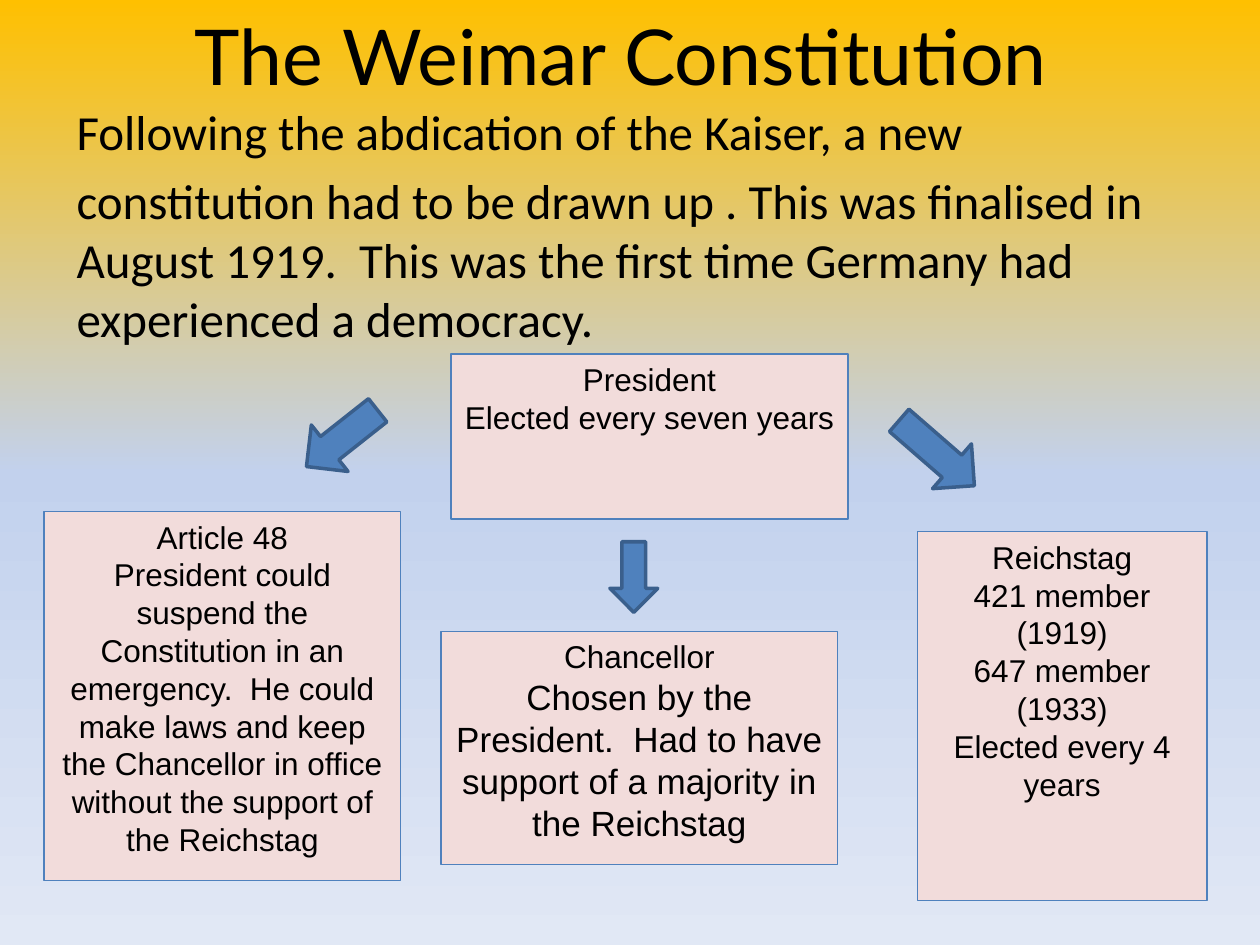
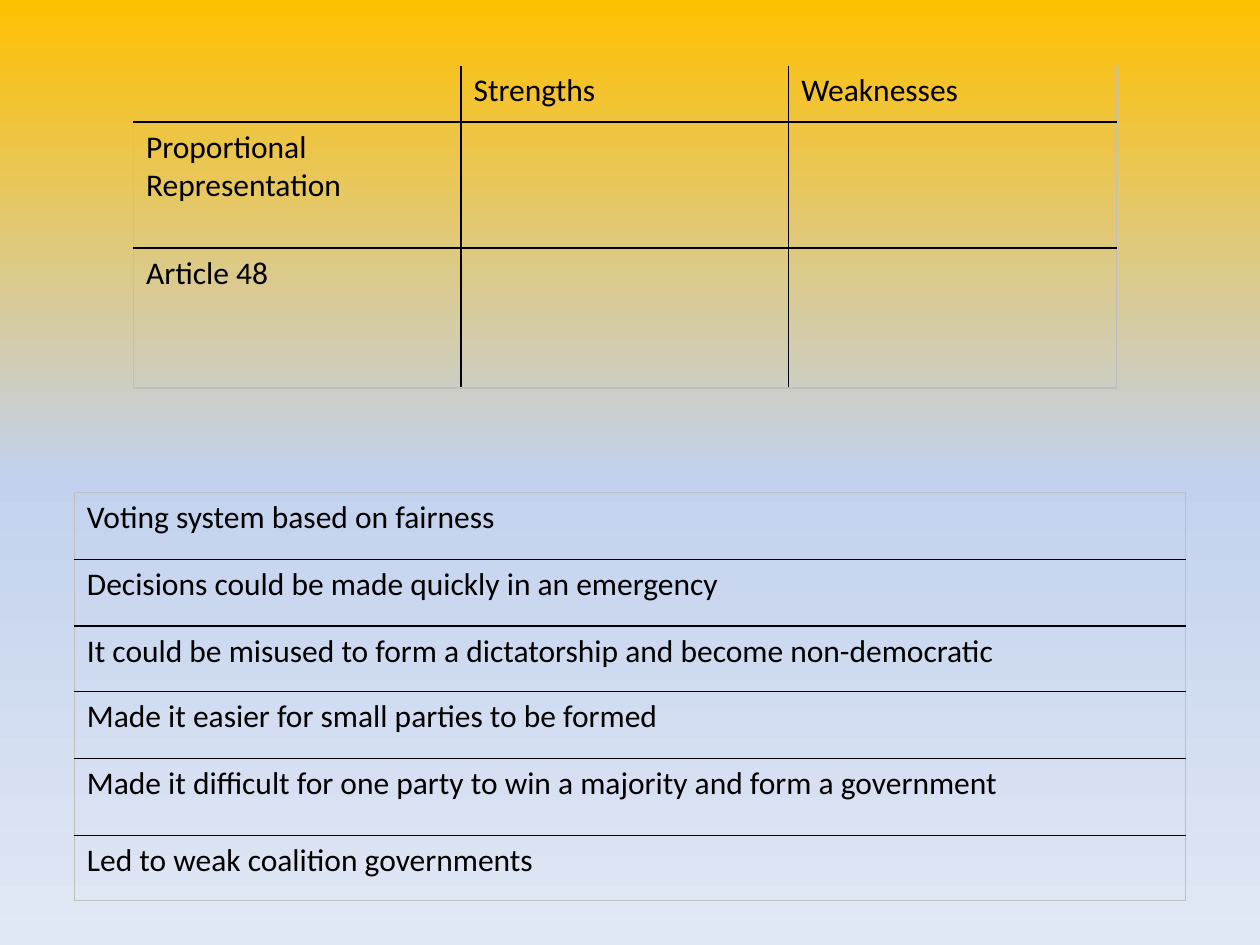
from copy import deepcopy

from lxml import etree
from pptx import Presentation
from pptx.dml.color import RGBColor
from pptx.enum import shapes, text
from pptx.oxml.ns import qn
from pptx.util import Inches, Pt

BLACK = RGBColor(0x00, 0x00, 0x00)
PINK = RGBColor(0xF2, 0xDC, 0xDB)
BLUE = RGBColor(0x4F, 0x81, 0xBD)
DARK_BLUE = RGBColor(0x3A, 0x5F, 0x8C)
GREY = RGBColor(0xBF, 0xBF, 0xBF)
BACKGROUND = [
    (0, RGBColor(0xFF, 0xC0, 0x00)),
    (0.5, RGBColor(0xC2, 0xD1, 0xED)),
    (1, RGBColor(0xE1, 0xE8, 0xF5)),
]
TITLE_ONLY, BLANK = 5, 6

BOXES = [
    ((0.35, 4.06, 2.83, 2.93), 18, [
        "Article 48",
        "President could suspend the Constitution in an emergency.  He could make laws "
        "and keep the Chancellor in office without the support of the Reichstag"]),
    ((3.5, 5.01, 3.15, 1.85), 20, [
        "Chancellor",
        "Chosen by the President.  Had to have support of a majority in the Reichstag"]),
    ((7.28, 4.22, 2.3, 2.93), 18, [
        "Reichstag", "421 member (1919)", "647 member (1933)", "Elected every 4 years"]),
    ((3.58, 2.81, 3.15, 1.31), 18, ["President", "Elected every seven years "]),
]
ARROWS = [
    ((4.84, 4.3, 0.38, 0.56), 0),
    ((2.48, 3.12, 0.47, 0.72), 51.7),
    ((7.2, 3.2, 0.47, 0.79), 311),
]
COMPARISON = [
    ["", "Strengths", "Weaknesses"],
    ["Proportional Representation", "", ""],
    ["Article 48", "", ""],
]
STATEMENTS = [
    "Voting system based on fairness",
    "Decisions could be made quickly in an emergency",
    "It could be misused to form a dictatorship and become non-democratic",
    "Made it easier for small parties to be formed",
    "Made it difficult for one party to win a majority and form a government",
    "Led to weak coalition governments",
]


def add_border(cell, side, color):
    """Draw one side (L, R, T or B) of a cell, or hide it when color is None."""
    line = etree.SubElement(cell._tc.get_or_add_tcPr(), qn(f"a:ln{side}"), w=str(Pt(1)))
    if color is None:
        etree.SubElement(line, qn("a:noFill"))
    else:
        fill = etree.SubElement(line, qn("a:solidFill"))
        etree.SubElement(fill, qn("a:srgbClr"), val=str(color))


class Deck:
    def __init__(self):
        self.presentation = Presentation()
        self.presentation.slide_width = Inches(10)
        self.presentation.slide_height = Inches(7.5)
        self.slide = None

    def add_slide(self, layout):
        layouts = self.presentation.slide_layouts
        self.slide = self.presentation.slides.add_slide(layouts[layout])
        fill = self.slide.background.fill
        fill.gradient()
        fill.gradient_angle = 270
        stop_list = next(self.slide.element.iter(qn("a:gsLst")))
        stop_list.append(deepcopy(stop_list[0]))
        for stop, (position, color) in zip(fill.gradient_stops, BACKGROUND):
            stop.position = position
            stop.color.rgb = color

    def set_text(self, frame, lines, size, font, alignment=text.PP_ALIGN.LEFT):
        frame.word_wrap = True
        frame.text = "\n".join(lines)
        for paragraph in frame.paragraphs:
            paragraph.alignment = alignment
            paragraph.font.size = Pt(size)
            for run in paragraph.runs:
                run.font.name = font
                run.font.size = Pt(size)
                run.font.color.rgb = BLACK

    def title(self, place, words):
        title = self.slide.shapes.title
        title.left, title.top, title.width, title.height = map(Inches, place)
        title.text_frame.vertical_anchor = text.MSO_ANCHOR.MIDDLE
        self.set_text(title.text_frame, [words], 44, "Lato", text.PP_ALIGN.CENTER)

    def body(self, place, lines):
        frame = self.slide.shapes.add_textbox(*map(Inches, place)).text_frame
        self.set_text(frame, lines, 28, "Calibri")
        for paragraph in frame.paragraphs:
            paragraph.space_before = Pt(5.6)

    def shape(self, kind, place, fill, line, line_width):
        shape = self.slide.shapes.add_shape(kind, *map(Inches, place))
        shape.shadow.inherit = False
        shape.fill.solid()
        shape.fill.fore_color.rgb = fill
        shape.line.color.rgb = line
        shape.line.width = Pt(line_width)
        return shape

    def box(self, place, detail_size, lines):
        box = self.shape(shapes.MSO_SHAPE.RECTANGLE, place, PINK, BLUE, 0.75)
        frame = box.text_frame
        frame.vertical_anchor = text.MSO_ANCHOR.TOP
        self.set_text(frame, lines, detail_size, "Arial", text.PP_ALIGN.CENTER)
        frame.paragraphs[0].runs[0].font.size = Pt(18)

    def arrow(self, place, rotation):
        arrow = self.shape(shapes.MSO_SHAPE.DOWN_ARROW, place, BLUE, DARK_BLUE, 2)
        arrow.rotation = rotation

    def table(self, left, top, column_width, row_heights, rows, top_line):
        """Add an unfilled table with black inner lines and a grey outline."""
        row_count, column_count = len(rows), len(rows[0])
        table = self.slide.shapes.add_table(
            row_count, column_count, Inches(left), Inches(top),
            Inches(column_width * column_count), Inches(sum(row_heights))).table
        table.first_row = table.horz_banding = False
        for column in table.columns:
            column.width = Inches(column_width)
        for i, (row, height) in enumerate(zip(rows, row_heights)):
            table.rows[i].height = Inches(height)
            for j, words in enumerate(row):
                cell = table.cell(i, j)
                self.set_text(cell.text_frame, [words], 18, "Calibri")
                add_border(cell, "L", BLACK if j else GREY)
                add_border(cell, "R", BLACK if j < column_count - 1 else GREY)
                add_border(cell, "T", BLACK if i else top_line)
                add_border(cell, "B", BLACK if i < row_count - 1 else GREY)
                cell.fill.background()


def main():
    deck = Deck()

    deck.add_slide(TITLE_ONLY)
    deck.title((0.51, -0.19, 9, 1.25), "The Weimar Constitution ")
    deck.body((0.51, 0.76, 9.49, 2.39), [
        "Following the abdication of the Kaiser, a new",
        "constitution had to be drawn up . This was finalised in August 1919.  "
        "This was the first time Germany had experienced a democracy."])
    for place, detail_size, lines in BOXES:
        deck.box(place, detail_size, lines)
    for place, rotation in ARROWS:
        deck.arrow(place, rotation)

    deck.add_slide(BLANK)
    deck.table(1.06, 0.52, 2.6, [0.45, 1, 1.11], COMPARISON, None)
    deck.table(0.59, 3.91, 8.82, [0.53, 0.53, 0.52, 0.53, 0.61, 0.52],
               [[statement] for statement in STATEMENTS], GREY)

    deck.presentation.save("out.pptx")


if __name__ == "__main__":
    main()
